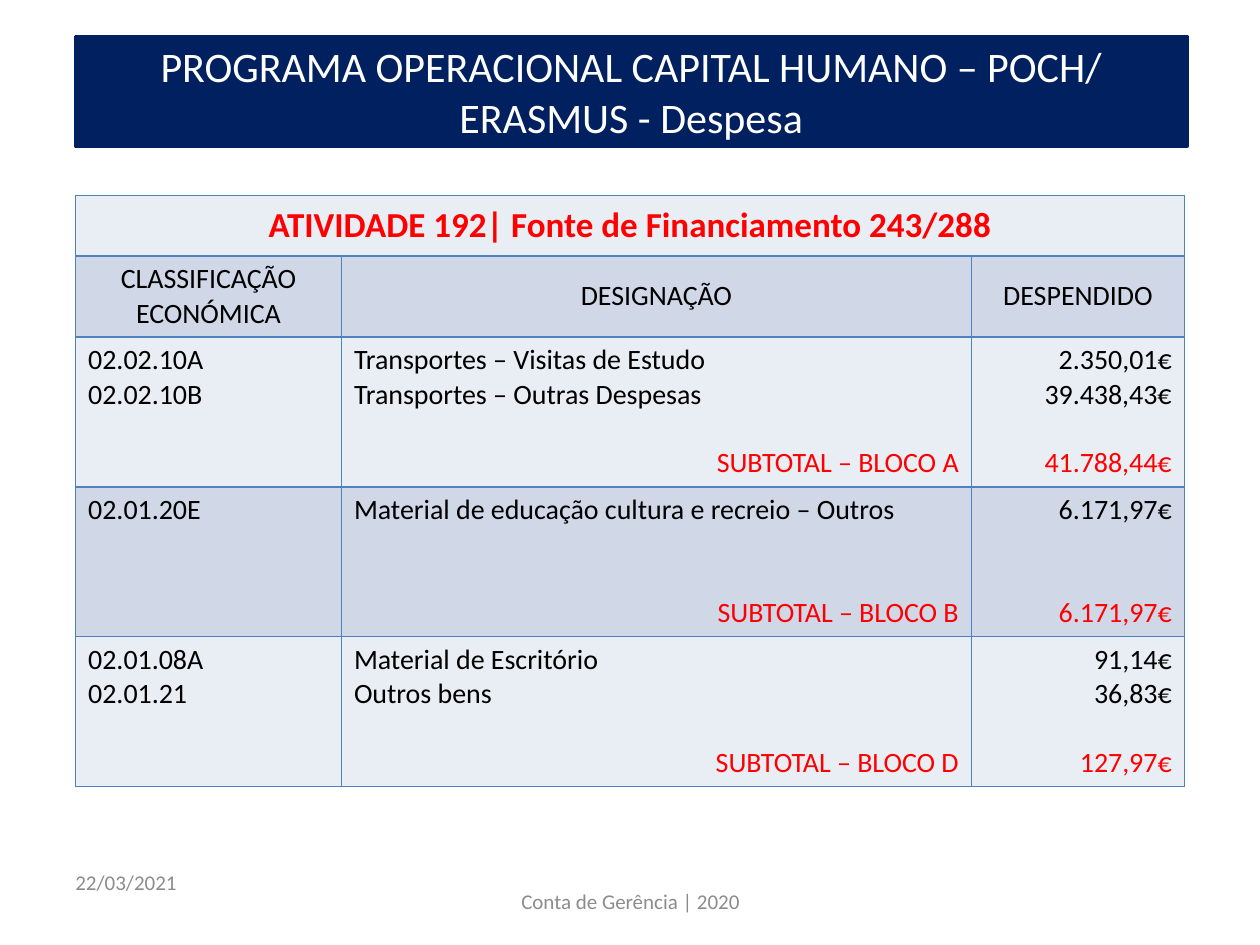
from lxml import etree
from pptx import Presentation
from pptx.dml.color import RGBColor
from pptx.enum.text import MSO_ANCHOR, MSO_AUTO_SIZE, PP_ALIGN
from pptx.oxml import parse_xml
from pptx.oxml.ns import nsdecls, qn
from pptx.util import Inches, Pt

NAVY = RGBColor(0x00, 0x20, 0x60)
WHITE = RGBColor(0xFF, 0xFF, 0xFF)
BLACK = RGBColor(0x00, 0x00, 0x00)
RED = RGBColor(0xFF, 0x00, 0x00)
GREY = RGBColor(0x8C, 0x8C, 0x8C)
BORDER = RGBColor(0x4F, 0x81, 0xBD)
LIGHT = RGBColor(0xE9, 0xED, 0xF4)
DARK = RGBColor(0xD0, 0xD8, 0xE8)
LEFT, CENTER, RIGHT = PP_ALIGN.LEFT, PP_ALIGN.CENTER, PP_ALIGN.RIGHT
LINE = 19.5  # height of one 16 pt table line, in points


def style(p, text, size, color, align=LEFT, bold=False, before=0):
    p.text = text
    p.alignment = align
    p.space_before = Pt(before)
    p.font.name, p.font.size, p.font.bold = "Calibri", Pt(size), bold
    p.font.color.rgb = color


def fill_cell(cell, lines, fill, anchor=MSO_ANCHOR.TOP):
    """Each line is (text, size, color, align, bold, space before)."""
    tf = cell.text_frame
    for i, line in enumerate(lines):
        style(tf.add_paragraph() if i else tf.paragraphs[0], *line)
    cell.vertical_anchor = anchor
    tcPr = cell._tc.get_or_add_tcPr()
    for side in ("lnL", "lnR", "lnT", "lnB"):
        ln = etree.SubElement(tcPr, qn(f"a:{side}"), w=str(Pt(1)))
        solid = etree.SubElement(ln, qn("a:solidFill"))
        etree.SubElement(solid, qn("a:srgbClr"), val=str(BORDER))
    cell.fill.solid()
    cell.fill.fore_color.rgb = fill


prs = Presentation()
prs.slide_width, prs.slide_height = Inches(10), Inches(7.5)
s = prs.slides.add_slide(prs.slide_layouts[5])

# Title banner
title = s.shapes.title
title.left, title.top = Inches(0.6), Inches(0.29)
title.width, title.height = Inches(8.82), Inches(0.87)
title._element.spPr.append(parse_xml(
    f'<a:prstGeom {nsdecls("a")} prst="roundRect"><a:avLst/></a:prstGeom>'))
title.fill.solid()
title.fill.fore_color.rgb = NAVY
title.line.color.rgb = NAVY
title.line.width = Pt(2)
tf = title.text_frame
tf.auto_size = MSO_AUTO_SIZE.NONE
tf.vertical_anchor = MSO_ANCHOR.MIDDLE
style(tf.paragraphs[0],
      "PROGRAMA OPERACIONAL CAPITAL HUMANO – POCH/ ERASMUS - Despesa",
      24, WHITE, CENTER)

# Expense table
widths = [2.11, 5, 1.69]
heights = [0.48, 0.64, 1.19, 1.19, 1.19]
table = s.shapes.add_table(5, 3, Inches(0.6), Inches(1.55), Inches(sum(widths)),
                           Inches(sum(heights))).table
table.first_row = table.horz_banding = False
for col, width in zip(table.columns, widths):
    col.width = Inches(width)
for row, height in zip(table.rows, heights):
    row.height = Inches(height)

# Heading rows
table.cell(0, 0).merge(table.cell(0, 2))
heading = [("ATIVIDADE 192| Fonte de Financiamento 243/288", 20, RED, CENTER, True)]
for c in range(3):
    fill_cell(table.cell(0, c), [] if c else heading, LIGHT, MSO_ANCHOR.MIDDLE)
headers = [["CLASSIFICAÇÃO", "ECONÓMICA"], ["DESIGNAÇÃO"], ["DESPENDIDO"]]
for c, words in enumerate(headers):
    fill_cell(table.cell(1, c), [(w, 16, BLACK, CENTER) for w in words],
              DARK, MSO_ANCHOR.MIDDLE)

# Blocks: entries, then a subtotal on the fourth line
blocks = [
    ("A", "41.788,44€", [("02.02.10A", "Transportes – Visitas de Estudo", "2.350,01€"),
                         ("02.02.10B", "Transportes – Outras Despesas", "39.438,43€")]),
    ("B", "6.171,97€", [("02.01.20E", "Material de educação cultura e recreio – Outros",
                         "6.171,97€")]),
    ("D", "127,97€", [("02.01.08A", "Material de Escritório", "91,14€"),
                      ("02.01.21", "Outros bens", "36,83€")]),
]
for r, (name, total, entries) in enumerate(blocks, start=2):
    gap = (3 - len(entries)) * LINE
    subtotals = [None, f"SUBTOTAL – BLOCO {name}", total]
    for c, (texts, subtotal) in enumerate(zip(zip(*entries), subtotals)):
        lines = [(t, 16, BLACK, RIGHT if c == 2 else LEFT) for t in texts]
        if subtotal:
            lines.append((subtotal, 16, RED, RIGHT, False, gap))
        fill_cell(table.cell(r, c), lines, DARK if r % 2 else LIGHT)

# Date and footer
for text, x, y, w, align in [("22/03/2021", 0.5, 6.8, 2.33, LEFT),
                             ("Conta de Gerência | 2020", 3.42, 6.95, 3.17, CENTER)]:
    tf = s.shapes.add_textbox(Inches(x), Inches(y), Inches(w), Inches(0.4)).text_frame
    tf.word_wrap = True
    tf.vertical_anchor = MSO_ANCHOR.MIDDLE
    style(tf.paragraphs[0], text, 12, GREY, align)

prs.save("out.pptx")
